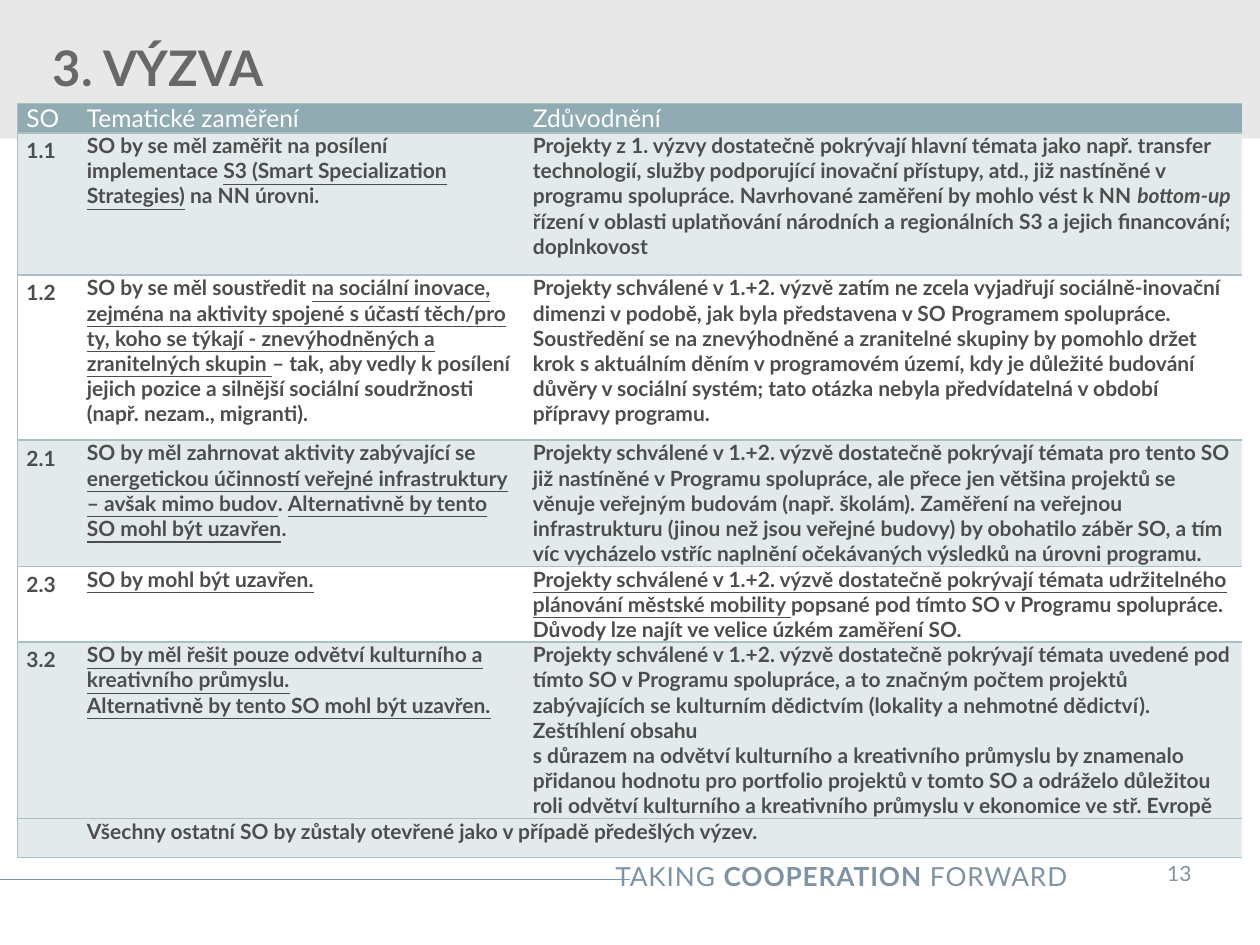
"""Build the slide on the focus of the third call."""
from lxml.etree import SubElement
from pptx import Presentation
from pptx.dml.color import RGBColor
from pptx.enum.shapes import MSO_CONNECTOR, MSO_SHAPE
from pptx.enum.text import MSO_ANCHOR, MSO_AUTO_SIZE, PP_ALIGN
from pptx.oxml.ns import qn
from pptx.util import Inches, Pt

HUES = {"band": "E8E8E8", "title": "686868", "foot": "7E93A5", "head": "90ABB1",
        "tint": "E3EAEB", "edge": "ABC0C4", "ink": "4D4D4E", "white": "FFFFFF"}


def write(par, parts, size, hue, bold=False):
    for text, mark in parts:
        for i, line in enumerate(text.split("\n")):
            if i:
                par.add_line_break()
            run = par.add_run()
            run.text = line
            font = run.font
            font.name, font.size = "Lato", Pt(size)
            font.color.rgb = RGBColor.from_string(HUES[hue])
            font.bold = bold or mark == "b"
            font.italic = mark == "i"
            font.underline = mark == "u"


def edge(cell, side):
    line = SubElement(cell._tc.get_or_add_tcPr(), qn("a:ln" + side), w=str(Pt(1)))
    fill = SubElement(line, qn("a:solidFill"))
    SubElement(fill, qn("a:srgbClr"), val=HUES["edge"])


deck = Presentation()
deck.slide_width, deck.slide_height = Inches(10), Inches(7.5)
slide = deck.slides.add_slide(deck.slide_layouts[5])
shapes = slide.shapes

rule = shapes.add_connector(MSO_CONNECTOR.STRAIGHT, Inches(-0.01), Inches(6.98),
                            Inches(5), Inches(6.98))
rule.line.color.rgb = RGBColor.from_string(HUES["foot"])
rule.line.width = Pt(0.75)
SubElement(rule._element.spPr, qn("a:effectLst"))

band = shapes.add_shape(MSO_SHAPE.RECTANGLE, 0, 0, Inches(10), Inches(1.1))
band.shadow.inherit = False
band.fill.solid()
band.fill.fore_color.rgb = RGBColor.from_string(HUES["band"])
band.line.fill.background()

motto = shapes.add_textbox(Inches(3.88), Inches(6.78), Inches(4.69), Inches(0.35))
motto.text_frame.word_wrap = True
par = motto.text_frame.paragraphs[0]
par.alignment = PP_ALIGN.RIGHT
write(par, [("TAKING ", ""), ("COOPERATION", "b"), (" FORWARD", "")], 15, "foot")
for run in par.runs:
    run.font._element.set("spc", "50")

page = shapes.add_textbox(Inches(8.99), Inches(6.73), Inches(0.74), Inches(0.4))
frame = page.text_frame
frame.word_wrap = False
frame.margin_left = frame.margin_right = Inches(0.2)
frame.margin_top = frame.margin_bottom = Inches(0.1)
frame.paragraphs[0].alignment = PP_ALIGN.CENTER
write(frame.paragraphs[0], [("13", "")], 12, "foot")

title = shapes.title
title.left, title.top = Inches(0.08), Inches(0.16)
title.width, title.height = Inches(7.13), Inches(0.75)
frame = title.text_frame
frame.auto_size = MSO_AUTO_SIZE.NONE
frame.vertical_anchor = MSO_ANCHOR.MIDDLE
par = frame.paragraphs[0]
par.alignment = PP_ALIGN.LEFT
par._p.get_or_add_pPr().set("marL", str(Inches(0.24)))
write(par, [("3. VÝZVA", "")], 28, "title", True)
shapes._spTree.append(title._element)

rows = [
    ("SO", [[("Tematické zaměření", "")]], [("Zdůvodnění", "")]),
    ("1.1",
     [[("SO by se měl zaměřit na posílení implementace ", ""),
       ("S3 (Smart Specialization Strategies)", "u"), (" na NN úrovni.", "")]],
     [("Projekty z 1. výzvy dostatečně pokrývají hlavní témata jako např. transfer "
       "technologií, služby podporující inovační přístupy, atd., již nastíněné v "
       "programu spolupráce. Navrhované zaměření by mohlo vést k NN ", ""),
      ("bottom-up ", "i"),
      ("řízení v oblasti uplatňování národních a regionálních S3 a jejich "
       "financování; doplnkovost", "")]),
    ("1.2",
     [[("SO by se měl soustředit ", ""),
       ("na sociální inovace, zejména na aktivity spojené s účastí těch/pro ty, koho "
        "se týkají - znevýhodněných a zranitelných skupin ", "u"),
       ("– tak, aby vedly k posílení jejich pozice a silnější sociální soudržnosti "
        "(např. nezam., migranti).", "")]],
     [("Projekty schválené v 1.+2. výzvě zatím ne zcela vyjadřují sociálně-inovační "
       "dimenzi v podobě, jak byla představena v SO Programem spolupráce. Soustředění "
       "se na znevýhodněné a zranitelné skupiny by pomohlo držet krok s aktuálním "
       "děním v programovém území, kdy je důležité budování důvěry v sociální systém; "
       "tato otázka nebyla předvídatelná v období přípravy programu.", "")]),
    ("2.1",
     [[("SO by měl zahrnovat aktivity zabývající se ", ""),
       ("energetickou účinností veřejné infrastruktury – avšak mimo budov", "u"),
       (". ", ""), ("Alternativně by tento SO mohl být uzavřen", "u"), (".", "")]],
     [("Projekty schválené v 1.+2. výzvě dostatečně pokrývají témata pro tento SO již "
       "nastíněné v Programu spolupráce, ale přece jen většina projektů se věnuje "
       "veřejným budovám (např. školám). Zaměření na veřejnou infrastrukturu (jinou "
       "než jsou veřejné budovy) by obohatilo záběr SO, a tím víc vycházelo vstříc "
       "naplnění očekávaných výsledků na úrovni programu.", "")]),
    ("2.3",
     [[("SO by mohl být uzavřen.", "u")]],
     [("Projekty schválené v 1.+2. výzvě dostatečně pokrývají témata udržitelného "
       "plánování městské mobility ", "u"),
      ("popsané pod tímto SO v Programu spolupráce. Důvody lze najít ve velice úzkém "
       "zaměření SO.", "")]),
    ("3.2",
     [[("SO by měl řešit pouze odvětví kulturního a kreativního průmyslu.", "u")],
      [("Alternativně by tento SO mohl být uzavřen.", "u")]],
     [("Projekty schválené v 1.+2. výzvě dostatečně pokrývají témata uvedené pod tímto "
       "SO v Programu spolupráce, a to značným počtem projektů zabývajících se "
       "kulturním dědictvím (lokality a nehmotné dědictví). Zeštíhlení obsahu\n"
       "s důrazem na odvětví kulturního a kreativního průmyslu by znamenalo přidanou "
       "hodnotu pro portfolio projektů v tomto SO a odráželo důležitou roli odvětví "
       "kulturního a kreativního průmyslu v ekonomice ve stř. Evropě", "")]),
    ("",
     [[("Všechny ostatní SO by zůstaly otevřené jako v případě předešlých výzev.", "")]],
     []),
]
fills = ["head", "tint", "white", "tint", "white", "tint", "tint"]
highs = [0.22, 1.13, 1.31, 0.94, 0.56, 1.13, 0.31]
wides = [0.48, 3.54, 5.7]

grid = shapes.add_table(len(rows), len(wides), Inches(0.14), Inches(0.82),
                        Inches(sum(wides)), Inches(sum(highs))).table
grid.first_row = grid.horz_banding = False
grid._tbl.tblPr[0].text = "{2D5ABB26-0587-4C30-8999-92F81FD0307C}"
for col, wide in zip(grid.columns, wides):
    col.width = Inches(wide)
for r, (code, focus, reason) in enumerate(rows):
    grid.rows[r].height = Inches(highs[r])
    size, hue = (12, "ink") if r else (14, "white")
    for c, pars in enumerate([[[(code, "")]], focus, [reason]]):
        cell = grid.cell(r, c)
        cell.margin_left = cell.margin_right = Inches(0.07)
        cell.margin_top = cell.margin_bottom = 0
        for side in "TB" if c else "LTB":
            edge(cell, side)
        if fills[r] == "white":
            cell.fill.background()
        else:
            cell.fill.solid()
            cell.fill.fore_color.rgb = RGBColor.from_string(HUES[fills[r]])
        frame = cell.text_frame
        for i, parts in enumerate(pars):
            par = frame.add_paragraph() if i else frame.paragraphs[0]
            if r and not c:
                par.line_spacing = 1.2
            write(par, parts, size, hue, r > 0)
grid.cell(6, 1).merge(grid.cell(6, 2))

deck.save("out.pptx")
